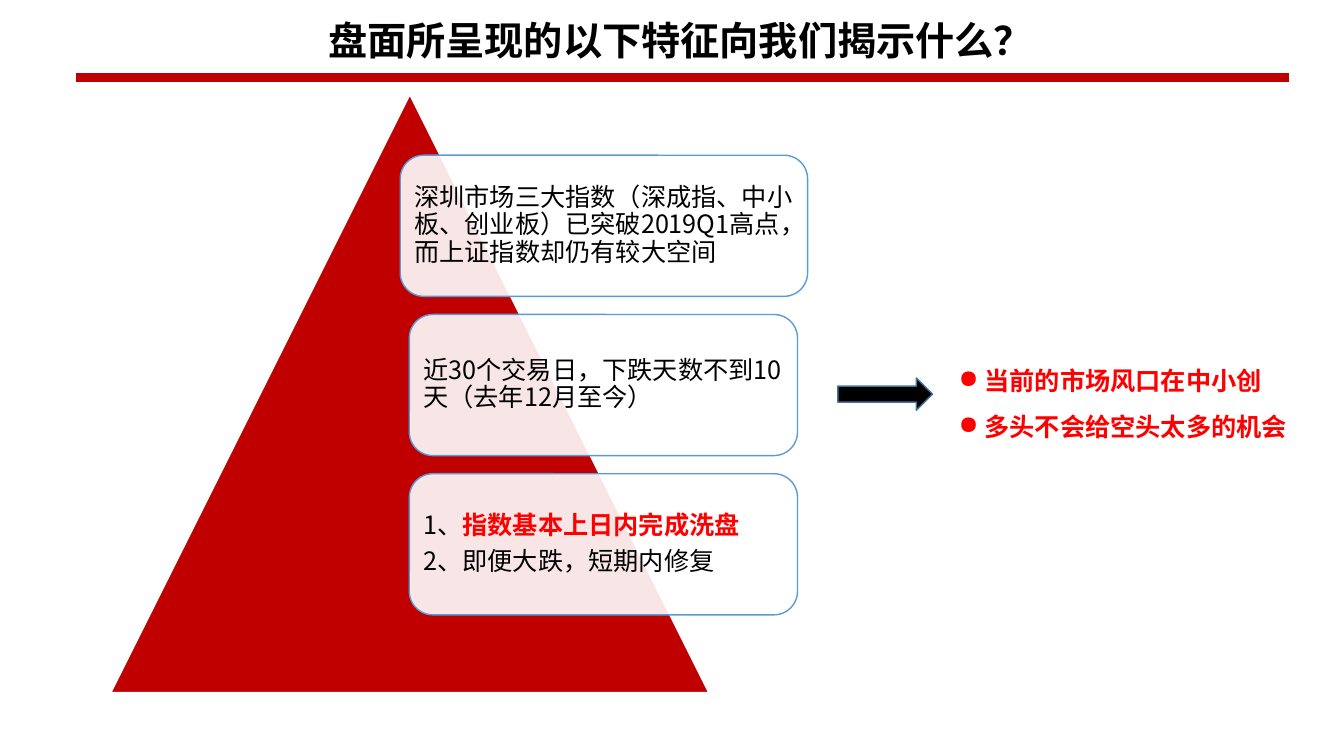
from lxml import etree
from pptx import Presentation
from pptx.dml.color import RGBColor
from pptx.enum.shapes import MSO_CONNECTOR, MSO_SHAPE
from pptx.enum.text import MSO_ANCHOR, MSO_AUTO_SIZE, PP_ALIGN
from pptx.oxml.ns import qn
from pptx.util import Inches, Pt

COLORS = {
    "black": "000000",
    "white": "FFFFFF",
    "crimson": "C00000",
    "red": "FF0000",
    "card_line": "5B9BD5",
    "arrow_line": "43739E",
}
CJK_FONT = "Noto Sans CJK SC"

# Each paragraph is a list of (text, highlighted) pieces.
CARDS = [
    (3.97, 4.04, [[("深圳市场三大指数（深成指、中小板、创业板）已突破2019Q1高点，而上证指数却仍有较大空间", False)]]),
    (4.06, 3.85, [[("近30个交易日，下跌天数不到10天（去年12月至今）", False)]]),
    (4.06, 3.85, [[("1、", False), ("指数基本上日内完成洗盘", True)],
                  [("2、即便大跌，短期内修复", False)]]),
]
CARD_TOP, CARD_HEIGHT, CARD_STEP = 1.54, 1.4, 1.58
CONCLUSIONS = ["当前的市场风口在中小创", "多头不会给空头太多的机会"]


def color(name):
    return RGBColor.from_string(COLORS[name])


def style_run(run, size, color_name, bold=False, latin=CJK_FONT):
    font = run.font
    font.size = Pt(size)
    font.bold = bold
    font.color.rgb = color(color_name)
    font.name = latin
    east_asian = etree.Element(qn("a:ea"), typeface=CJK_FONT)
    run._r.get_or_add_rPr().find(qn("a:latin")).addnext(east_asian)


def add_title(slide, text):
    title = slide.shapes.title
    title.left, title.top = Inches(2.49), Inches(0.11)
    title.width, title.height = Inches(8.52), Inches(0.57)
    frame = title.text_frame
    frame.text = text
    frame.word_wrap = True
    frame.auto_size = MSO_AUTO_SIZE.SHAPE_TO_FIT_TEXT
    frame.vertical_anchor = MSO_ANCHOR.MIDDLE
    paragraph = frame.paragraphs[0]
    paragraph.alignment = PP_ALIGN.CENTER
    style_run(paragraph.runs[0], 28, "black", bold=True)


def add_rule(slide):
    rule = slide.shapes.add_connector(
        MSO_CONNECTOR.STRAIGHT, Inches(0.75), Inches(0.77), Inches(12.78), Inches(0.77))
    rule.line.color.rgb = color("crimson")
    rule.line.width = Pt(6)
    etree.SubElement(rule._element.spPr, qn("a:effectLst"))


def add_filled_shape(slide, kind, left, top, width, height, fill, line):
    shape = slide.shapes.add_shape(
        kind, Inches(left), Inches(top), Inches(width), Inches(height))
    shape.shadow.inherit = False
    shape.fill.solid()
    shape.fill.fore_color.rgb = color(fill)
    shape.line.color.rgb = color(line)
    shape.line.width = Pt(1)
    return shape


def set_opacity(shape, percent):
    fill_color = shape._element.spPr.find(qn("a:solidFill"))[0]
    etree.SubElement(fill_color, qn("a:alpha"), val=str(percent * 1000))


def add_card(slide, left, top, width, paragraphs):
    card = add_filled_shape(slide, MSO_SHAPE.ROUNDED_RECTANGLE, left, top, width,
                            CARD_HEIGHT, "white", "card_line")
    set_opacity(card, 90)
    frame = card.text_frame
    frame.word_wrap = True
    frame.vertical_anchor = MSO_ANCHOR.MIDDLE
    frame.margin_left = frame.margin_right = Inches(0.07)
    frame.margin_top = frame.margin_bottom = Inches(0.07)
    frame.text = "\n".join("" for _ in paragraphs)
    for paragraph, pieces in zip(frame.paragraphs, paragraphs):
        paragraph.alignment = PP_ALIGN.LEFT
        paragraph.line_spacing = 0.9
        paragraph.space_after = Pt(6.3)
        for text, highlighted in pieces:
            run = paragraph.add_run()
            run.text = text
            style_run(run, 18, "red" if highlighted else "black", bold=highlighted)


def add_bullet(paragraph):
    properties = paragraph._p.get_or_add_pPr()
    properties.set("marL", "0")
    properties.set("indent", str(-Inches(0.31)))
    etree.SubElement(properties, qn("a:buChar"), char="●")


def add_conclusions(slide):
    box = slide.shapes.add_textbox(Inches(9.41), Inches(3.43), Inches(3.82), Inches(0.96))
    frame = box.text_frame
    frame.word_wrap = True
    frame.auto_size = MSO_AUTO_SIZE.SHAPE_TO_FIT_TEXT
    frame.text = "\n".join(f" {text}" for text in CONCLUSIONS)
    for paragraph in frame.paragraphs:
        add_bullet(paragraph)
        paragraph.line_spacing = 1.5
        style_run(paragraph.runs[0], 18, "red", bold=True, latin="Calibri")


def main():
    presentation = Presentation()
    presentation.slide_width = Inches(13.33)
    presentation.slide_height = Inches(7.5)
    slide = presentation.slides.add_slide(presentation.slide_layouts.get_by_name("Title Only"))

    add_rule(slide)
    add_title(slide, "盘面所呈现的以下特征向我们揭示什么？")
    add_filled_shape(slide, MSO_SHAPE.ISOSCELES_TRIANGLE, 1.1, 0.94, 5.93, 5.93,
                     "crimson", "white")
    for index, (left, width, paragraphs) in enumerate(CARDS):
        add_card(slide, left, CARD_TOP + index * CARD_STEP, width, paragraphs)
    add_filled_shape(slide, MSO_SHAPE.RIGHT_ARROW, 8.31, 3.75, 0.94, 0.32,
                     "black", "arrow_line")
    add_conclusions(slide)
    presentation.save("out.pptx")


if __name__ == "__main__":
    main()
